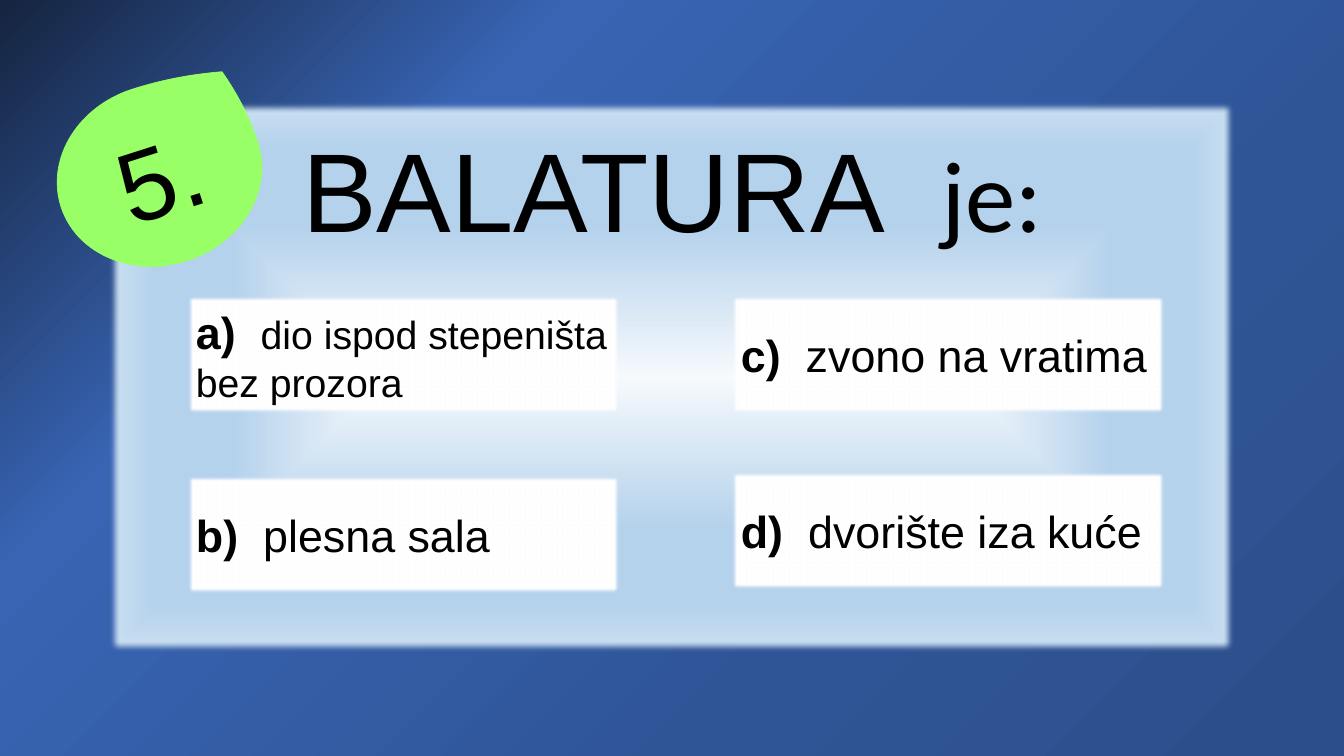
from lxml import etree
from pptx import Presentation
from pptx.dml.color import RGBColor
from pptx.enum.shapes import MSO_SHAPE
from pptx.enum.text import MSO_ANCHOR, PP_ALIGN
from pptx.oxml.ns import qn
from pptx.util import Pt

PX = 914400 / 100.8
RECTANGLE, TEARDROP = MSO_SHAPE.RECTANGLE, MSO_SHAPE.TEAR
TOP, MIDDLE = MSO_ANCHOR.TOP, MSO_ANCHOR.MIDDLE
LEFT, CENTER = PP_ALIGN.LEFT, PP_ALIGN.CENTER

BLACK = RGBColor(0x00, 0x00, 0x00)
WHITE = RGBColor(0xFF, 0xFF, 0xFF)
LIME = RGBColor(0x99, 0xFF, 0x66)
NIGHT = RGBColor(0x15, 0x24, 0x3F)
ROYAL = RGBColor(0x38, 0x64, 0xB3)
DENIM = RGBColor(0x2F, 0x55, 0x97)
NAVY = RGBColor(0x2C, 0x4F, 0x8C)
MIST = RGBColor(0xF7, 0xFA, 0xFD)
SKY = RGBColor(0xB5, 0xD2, 0xEC)
PALE = RGBColor(0xCE, 0xE1, 0xF2)

BACKGROUND_STOPS = [(0, NIGHT), (27, ROYAL), (69, DENIM), (97, NAVY)]
PANEL_STOPS = [(0, MIST), (54, SKY), (83, SKY), (100, PALE)]
ANSWERS = [
    (78, 194, "a)  ", "dio ispod stepeništa bez prozora", 28),
    (623, 194, "c)  ", "zvono na vratima", 32),
    (78, 374, "b)  ", "plesna sala", 32),
    (623, 370, "d)  ", "dvorište iza kuće", 32),
]


def px(length):
    """Turn pixels into EMU."""
    return round(length * PX)


def set_gradient(owner, fill, stops, angle=None):
    """Fill with colour stops, linear at an angle or from the centre outwards."""
    fill.gradient()
    gradient = owner.element.find(".//" + qn("a:gradFill"))
    for child in list(gradient):
        gradient.remove(child)
    stop_list = etree.SubElement(gradient, qn("a:gsLst"))
    for position, color in stops:
        stop = etree.SubElement(stop_list, qn("a:gs"), pos=str(position * 1000))
        etree.SubElement(stop, qn("a:srgbClr"), val=str(color))
    if angle is not None:
        etree.SubElement(gradient, qn("a:lin"), ang=str(angle * 60000), scaled="0")
    else:
        center = etree.SubElement(gradient, qn("a:path"), path="shape")
        sides = dict.fromkeys("ltrb", "50000")
        etree.SubElement(center, qn("a:fillToRect"), sides)


def add_plain_shape(slide, kind, box, color=None, soft_edge=0):
    """Add a shape without line or shadow, optionally with soft edges."""
    shape = slide.shapes.add_shape(kind, *map(px, box))
    shape.shadow.inherit = False
    shape.line.fill.background()
    if color is not None:
        shape.fill.solid()
        shape.fill.fore_color.rgb = color
    if soft_edge:
        effects = shape.element.spPr.find(qn("a:effectLst"))
        etree.SubElement(effects, qn("a:softEdge"), rad=str(px(soft_edge)))
    return shape


def write_line(shape, runs, alignment, anchor=MIDDLE):
    """Write one paragraph of (text, size, font, bold) runs."""
    frame = shape.text_frame
    frame.word_wrap = True
    frame.vertical_anchor = anchor
    paragraph = frame.paragraphs[0]
    paragraph.alignment = alignment
    for text, size, font, bold in runs:
        run = paragraph.add_run()
        run.text = text
        run.font.size = Pt(size)
        run.font.name = font
        run.font.bold = bold
        run.font.color.rgb = BLACK


def add_question(slide, box):
    """Place the panel with the question and its four answers."""
    panel = add_plain_shape(slide, RECTANGLE, box, soft_edge=7)
    set_gradient(panel, panel.fill, PANEL_STOPS)
    panel.text_frame.margin_top = px(20)
    title = [("BALATURA  ", 80, "Arial", False), ("je:", 72, "Calibri", False)]
    write_line(panel, title, CENTER, TOP)
    left, top = box[:2]
    for x, y, letter, answer, size in ANSWERS:
        answer_box = (left + x, top + y, 435, 120)
        card = add_plain_shape(slide, RECTANGLE, answer_box, WHITE, soft_edge=4)
        runs = [(letter, 32, "Arial", True), (answer, size, "Arial", False)]
        write_line(card, runs, LEFT)


def add_number(slide, box):
    """Place the tilted drop with the question number."""
    drop = add_plain_shape(slide, TEARDROP, box, LIME)
    drop.adjustments[0] = 0.88
    drop.rotation = 342.2
    drop.line.color.rgb = LIME
    drop.line.width = Pt(0.5)
    write_line(drop, [("5.", 72, "Arial", False)], CENTER)


def main():
    """Build and save the quiz slide."""
    presentation = Presentation()
    presentation.slide_width = px(1344)
    presentation.slide_height = px(756)
    slide = presentation.slides.add_slide(presentation.slide_layouts[6])
    set_gradient(slide, slide.background.fill, BACKGROUND_STOPS, 45)
    add_question(slide, (108, 101, 1129, 554))
    add_number(slide, (56, 85, 207, 180))
    presentation.save("out.pptx")


if __name__ == "__main__":
    main()
